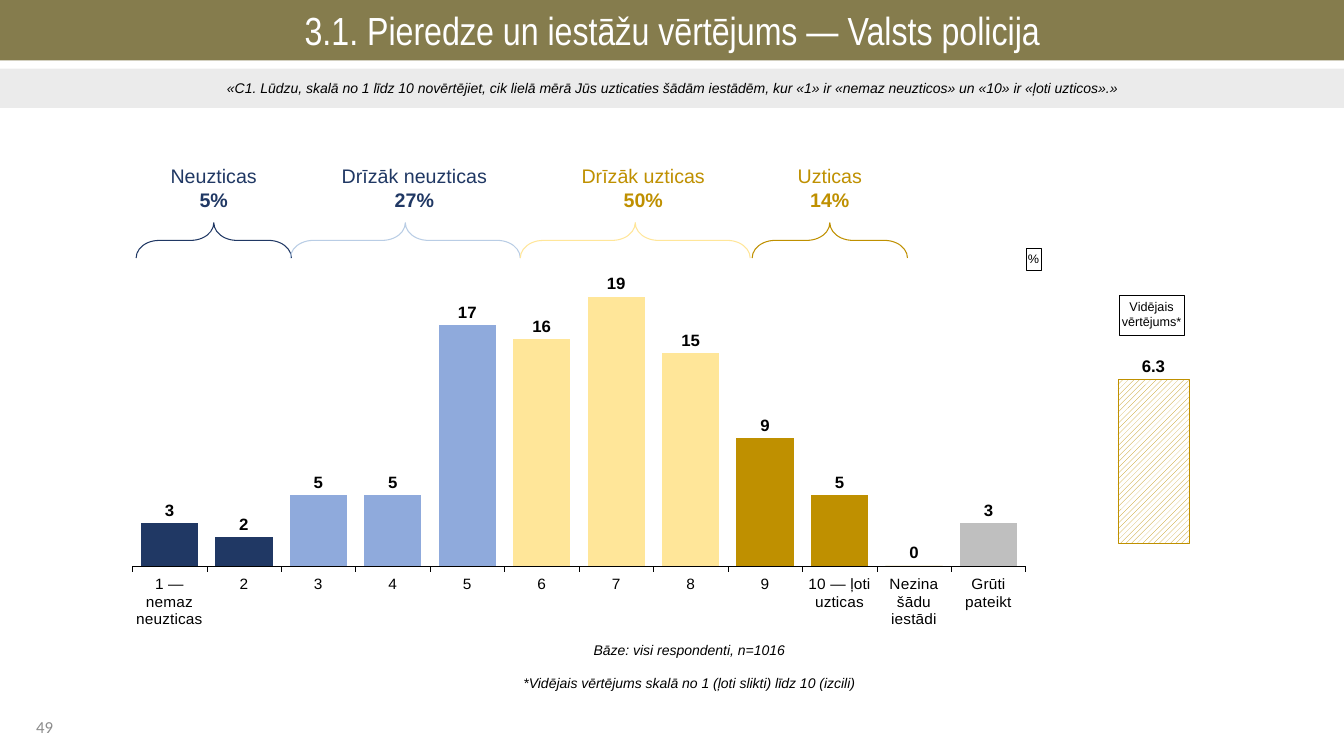
from dataclasses import dataclass

from lxml.etree import SubElement
from pptx import Presentation
from pptx.chart.data import CategoryChartData
from pptx.dml.color import RGBColor
from pptx.enum.chart import XL_CHART_TYPE, XL_LABEL_POSITION, XL_TICK_LABEL_POSITION, XL_TICK_MARK
from pptx.enum.dml import MSO_PATTERN
from pptx.enum.shapes import MSO_SHAPE
from pptx.enum.text import MSO_ANCHOR, PP_ALIGN
from pptx.oxml.ns import qn
from pptx.util import Inches, Pt


@dataclass(frozen=True)
class Theme:
    font: str = "Arial"
    heading_font: str = "Arial Narrow"
    number_font: str = "Calibri"
    black: str = "000000"
    white: str = "FFFFFF"
    olive: str = "857C4D"
    band: str = "D9D9D9"
    page_number: str = "8C8C8C"
    navy: str = "203864"
    blue: str = "8FAADC"
    pale_blue: str = "B9CDE5"
    cream: str = "FFE699"
    gold: str = "BF9000"
    gray: str = "BFBFBF"
    heading: int = 28
    group: int = 14
    value: int = 12
    axis: int = 11
    note: int = 10
    caption: int = 9
    hairline: float = 0.25
    brace: float = 0.75


THEME = Theme()

TRUST_LEVELS = [
    ("1 — nemaz neuzticas", 3, THEME.navy),
    ("2", 2, THEME.navy),
    ("3", 5, THEME.blue),
    ("4", 5, THEME.blue),
    ("5", 17, THEME.blue),
    ("6", 16, THEME.cream),
    ("7", 19, THEME.cream),
    ("8", 15, THEME.cream),
    ("9", 9, THEME.gold),
    ("10 — ļoti uzticas", 5, THEME.gold),
    ("Nezina šādu iestādi", 0, THEME.gold),
    ("Grūti pateikt", 3, THEME.gray),
]

TRUST_GROUPS = [
    ("Neuzticas", "5%", THEME.navy, THEME.navy, 1.35, 1.54, 0),
    ("Drīzāk neuzticas", "27%", THEME.navy, THEME.pale_blue, 2.88, 2.28, 0.09),
    ("Drīzāk uzticas", "50%", THEME.gold, THEME.cream, 5.16, 2.28, 0.08),
    ("Uzticas", "14%", THEME.gold, THEME.gold, 7.46, 1.54, 0),
]


def rgb(color):
    return RGBColor.from_string(color)


def style_font(font, size, color=THEME.black, name=THEME.font, bold=False, italic=False):
    font.name = name
    font.size = Pt(size)
    font.bold = bold
    font.italic = italic
    font.color.rgb = rgb(color)


def write(frame, lines, size, align=PP_ALIGN.CENTER, **style):
    frame.word_wrap = True
    frame.text = "\n".join(lines)
    for paragraph in frame.paragraphs:
        paragraph.alignment = align
        style_font(paragraph.font, size, **style)


def add_text(slide, box, lines, size, **style):
    frame = slide.shapes.add_textbox(*map(Inches, box)).text_frame
    write(frame, lines, size, **style)
    return frame


def add_band(slide, box, line, fill, size, **style):
    band = slide.shapes.add_shape(MSO_SHAPE.RECTANGLE, *map(Inches, box))
    band.shadow.inherit = False
    band.fill.solid()
    band.fill.fore_color.rgb = rgb(fill)
    band.line.fill.background()
    band.text_frame.vertical_anchor = MSO_ANCHOR.MIDDLE
    write(band.text_frame, [line], size, **style)
    return band


def add_header(slide, box):
    left, top, width, height = box
    add_band(slide, (left, top, width, 0.6),
             "3.1. Pieredze un iestāžu vērtējums — Valsts policija",
             THEME.olive, THEME.heading, color=THEME.white, name=THEME.heading_font)
    question = add_band(
        slide, (left, top + 0.68, width, height - 0.68),
        "«C1. Lūdzu, skalā no 1 līdz 10 novērtējiet, cik lielā mērā Jūs uzticaties šādām iestādēm, "
        "kur «1» ir «nemaz neuzticos» un «10» ir «ļoti uzticos».»",
        THEME.band, THEME.note, italic=True)
    fill_color = question.fill._xPr.find(qn("a:solidFill"))[0]
    SubElement(fill_color, qn("a:alpha")).set("val", "50000")


def set_layout(parent, **settings):
    layout = parent.find(qn("c:layout"))
    if layout is None:
        layout = SubElement(parent, qn("c:layout"))
        parent.insert(0, layout)
    manual = SubElement(layout, qn("c:manualLayout"))
    for key, value in settings.items():
        SubElement(manual, qn(f"c:{key}")).set("val", str(value))


def add_column_chart(slide, box, levels, title, title_at, plot_at, maximum, number_format):
    data = CategoryChartData(number_format=number_format)
    data.categories = [name for name, _, _ in levels]
    data.add_series("Series 1", [value for _, value, _ in levels])
    chart = slide.shapes.add_chart(
        XL_CHART_TYPE.COLUMN_CLUSTERED, *map(Inches, box), data).chart
    style_font(chart.font, THEME.caption)
    chart.has_legend = False

    chart.has_title = True
    write(chart.chart_title.text_frame, title, THEME.caption)
    chart.chart_title.include_in_layout = False
    chart.chart_title.format.line.color.rgb = rgb(THEME.black)
    chart.chart_title.format.line.width = Pt(THEME.hairline)
    set_layout(chart.chart_title._element, xMode="edge", yMode="edge",
               x=title_at[0], y=title_at[1])
    x, y, w, h = plot_at
    set_layout(chart._chartSpace.chart.plotArea, layoutTarget="inner",
               xMode="edge", yMode="edge", x=x, y=y, w=w, h=h)

    values = chart.value_axis
    values.minimum_scale, values.maximum_scale, values.major_unit = 0, maximum, 20
    values.has_major_gridlines = False
    values.visible = False

    plot = chart.plots[0]
    plot.gap_width = 30
    plot.vary_by_categories = False
    plot.has_data_labels = True
    labels = plot.data_labels
    labels.show_value = True
    labels.position = XL_LABEL_POSITION.OUTSIDE_END
    labels.number_format = number_format
    labels.number_format_is_linked = False
    style_font(labels.font, THEME.value, bold=True)
    return chart


def add_trust_chart(slide, box):
    chart = add_column_chart(slide, box, TRUST_LEVELS, ["%"], (0.95, 0.09),
                             (0, 0, 0.95, 0.87), 25, "0")
    axis = chart.category_axis
    axis.major_tick_mark = XL_TICK_MARK.OUTSIDE
    axis.tick_label_position = XL_TICK_LABEL_POSITION.LOW
    axis.format.line.color.rgb = rgb(THEME.black)
    axis.format.line.width = Pt(THEME.hairline)
    style_font(axis.tick_labels.font, THEME.axis)
    series = chart.plots[0].series[0]
    for index, (_, _, color) in enumerate(TRUST_LEVELS):
        fill = series.points[index].format.fill
        fill.solid()
        fill.fore_color.rgb = rgb(color)


def add_mean_chart(slide, box):
    chart = add_column_chart(slide, box, [("1", 6.3, THEME.gold)], ["Vidējais", "vērtējums*"],
                             (0.29, 0.04), (0.22, 0, 0.56, 0.87), 10, "0.0")
    chart.category_axis.visible = False
    bar = chart.plots[0].series[0].format
    bar.fill.patterned()
    bar.fill.pattern = MSO_PATTERN.WIDE_UPWARD_DIAGONAL
    bar.fill.fore_color.rgb = rgb(THEME.gold)
    bar.fill.back_color.rgb = rgb(THEME.white)
    bar.line.color.rgb = rgb(THEME.gold)
    bar.line.width = Pt(THEME.hairline)


def add_trust_group(slide, box, name, share, text_color, brace_color, label_shift):
    left, top, width, height = box
    depth, label_width = 0.35, 1.65
    center = left + width / 2
    middle = top + height - depth / 2
    brace = slide.shapes.add_shape(
        MSO_SHAPE.LEFT_BRACE, Inches(center - depth / 2), Inches(middle - width / 2),
        Inches(depth), Inches(width))
    brace.rotation = 90
    brace.adjustments[0] = 0.65
    brace.adjustments[1] = 0.5
    brace.shadow.inherit = False
    brace.fill.background()
    brace.line.color.rgb = rgb(brace_color)
    brace.line.width = Pt(THEME.brace)
    label = add_text(slide, (center + label_shift - label_width / 2, top, label_width, 0.57),
                     [name, share], THEME.group, color=text_color)
    label.paragraphs[1].font.bold = True


def add_footer(slide, box):
    left, top, width, height = box
    notes = add_text(slide, (left + 4.28, top, 4.59, 0.47),
                     ["Bāze: visi respondenti, n=1016",
                      "*Vidējais vērtējums skalā no 1 (ļoti slikti) līdz 10 (izcili)"],
                     THEME.note, italic=True)
    notes.vertical_anchor = MSO_ANCHOR.MIDDLE
    notes.margin_bottom = Inches(0.22)
    notes.paragraphs[1].space_before = Pt(12)
    number = add_text(slide, (left, top + height - 0.36, 1.42, 0.36), ["49"], THEME.value,
                      align=PP_ALIGN.LEFT, color=THEME.page_number, name=THEME.number_font)
    number.vertical_anchor = MSO_ANCHOR.MIDDLE


def main():
    deck = Presentation()
    deck.slide_width, deck.slide_height = Inches(13.33), Inches(7.5)
    slide = deck.slides.add_slide(deck.slide_layouts[6])
    add_footer(slide, (0.26, 6.46, 12.8, 0.93))
    add_header(slide, (0, 0, 13.33, 1.07))
    add_trust_chart(slide, (1.31, 2.1, 9.33, 4.13))
    add_mean_chart(slide, (10.62, 2.81, 1.64, 2.97))
    for name, share, text_color, brace_color, left, width, label_shift in TRUST_GROUPS:
        add_trust_group(slide, (left, 1.58, width, 0.98), name, share,
                        text_color, brace_color, label_shift)
    deck.save("out.pptx")


if __name__ == "__main__":
    main()
